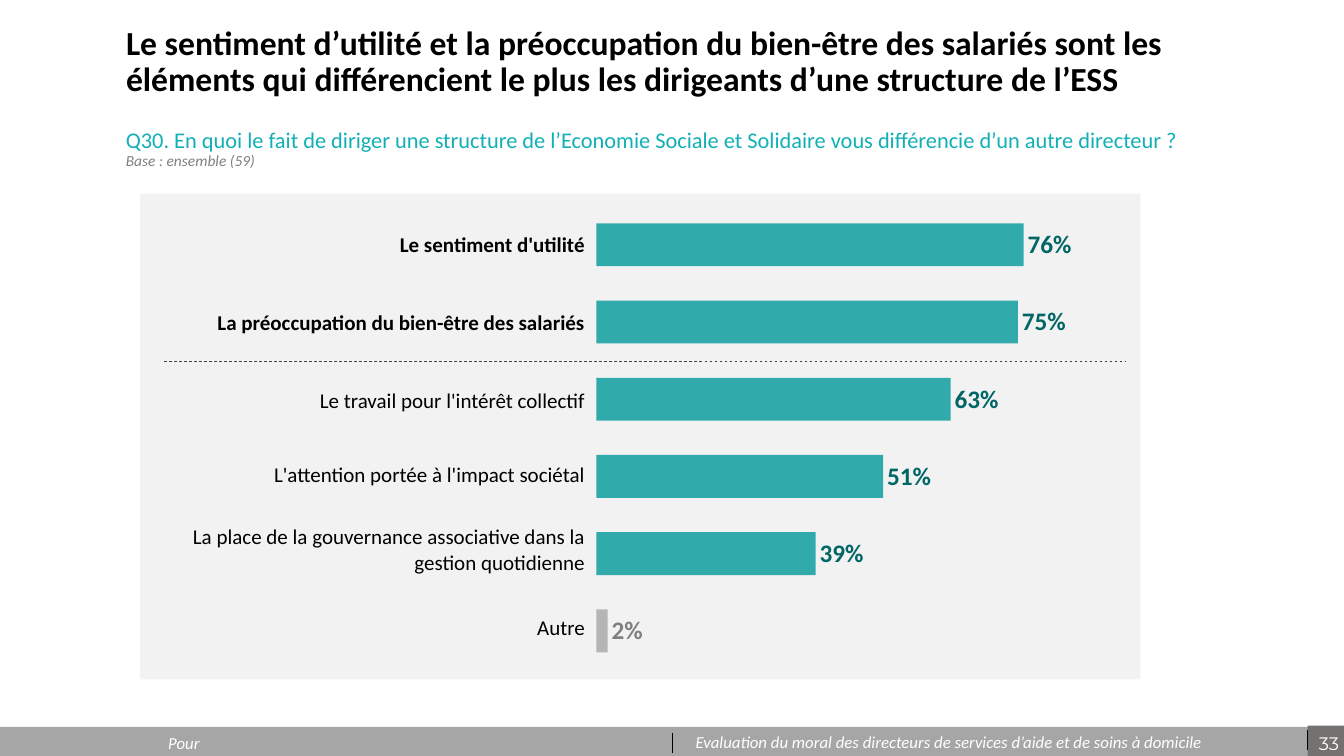
from pptx import Presentation
from pptx.chart.data import CategoryChartData
from pptx.dml.color import RGBColor
from pptx.enum.chart import XL_CHART_TYPE, XL_LABEL_POSITION
from pptx.enum.dml import MSO_LINE
from pptx.enum.shapes import MSO_CONNECTOR, MSO_SHAPE
from pptx.enum.text import MSO_ANCHOR, MSO_AUTO_SIZE, PP_ALIGN
from pptx.oxml import parse_xml
from pptx.oxml.ns import nsdecls, qn
from pptx.util import Inches, Pt
from lxml import etree


def rgb(value):
    return RGBColor.from_string(value)


def style_font(font, size, colour, bold=False, italic=False, name="Calibri"):
    font.name = name
    font.size = Pt(size)
    font.bold = bold
    font.italic = italic
    font.color.rgb = rgb(colour)


deck = Presentation()
deck.slide_width = Inches(13.33)
deck.slide_height = Inches(7.5)
page = deck.slides.add_slide(deck.slide_layouts[5])
shapes = page.shapes

# Footer bar, page number tile and chart panel
for left, top, width, height, colour in [
    (0, 7.21, 13.33, 0.29, "A6A6A6"),
    (12.97, 7.2, 0.36, 0.3, "767171"),
    (1.39, 1.92, 9.92, 4.82, "F2F2F2"),
]:
    block = shapes.add_shape(MSO_SHAPE.RECTANGLE, Inches(left), Inches(top),
                             Inches(width), Inches(height))
    block.shadow.inherit = False
    block.fill.solid()
    block.fill.fore_color.rgb = rgb(colour)
    block.line.fill.background()

# Footer texts
for text, left, top, width, wrap, align, size, italic, face in [
    ("33", 12.91, 7.22, 0.54, False, PP_ALIGN.CENTER, 12.9, False, "Montserrat"),
    ("Pour", 1.57, 7.22, 0.52, False, PP_ALIGN.LEFT, 12, True, "Calibri"),
    ("Evaluation du moral des directeurs de services d’aide et de soins à domicile",
     6.8, 7.21, 5.75, True, PP_ALIGN.LEFT, 12, True, "Calibri"),
]:
    box = shapes.add_textbox(Inches(left), Inches(top), Inches(width), Inches(0.3))
    box.text_frame.word_wrap = wrap
    para = box.text_frame.paragraphs[0]
    para.text = text
    para.alignment = align
    style_font(para.font, size, "FFFFFF", italic=italic, name=face)

# Title
title = shapes.title
title.left, title.top = Inches(1.15), Inches(0.31)
title.width, title.height = Inches(11.5), Inches(0.62)
title.text_frame.text = (
    "Le sentiment d’utilité et la préoccupation du bien-être des salariés sont les "
    "éléments qui différencient le plus les dirigeants d’une structure de l’ESS")
title.text_frame.word_wrap = True
title.text_frame.auto_size = MSO_AUTO_SIZE.NONE
title.text_frame.vertical_anchor = MSO_ANCHOR.MIDDLE
para = title.text_frame.paragraphs[0]
para.alignment = PP_ALIGN.LEFT
para.line_spacing = 0.9
style_font(para.font, 24, "000000", bold=True)

# Question and sample base
question = shapes.add_textbox(Inches(1.15), Inches(1.23), Inches(10.71), Inches(0.55))
question.text_frame.word_wrap = True
para = question.text_frame.paragraphs[0]
para.line_spacing = 0.9
span = para.add_run()
span.text = ("Q30. En quoi le fait de diriger une structure de l’Economie Sociale et "
             "Solidaire vous différencie d’un autre directeur ?")
style_font(span.font, 16, "13AFB7")
para.add_line_break()
span = para.add_run()
span.text = "Base : ensemble (59)"
style_font(span.font, 11, "808080", italic=True)

# Answer labels
answers = [
    ("Le sentiment d'utilité", 0.76, 0.77),
    ("La préoccupation du bien-être des salariés", 0.75, 0.78),
    ("Le travail pour l'intérêt collectif", 0.63, 0.77),
    ("L'attention portée à l'impact sociétal", 0.51, 0.71),
    ("La place de la gouvernance associative dans la gestion quotidienne", 0.39, 0.77),
    ("Autre", 0.02, 0.77),
]
table = shapes.add_table(len(answers), 1, Inches(1.6), Inches(2.04),
                         Inches(4.21), Inches(4.58)).table
table.first_row = False
table.horz_banding = False
no_grid_style = "{2D5ABB26-0587-4C30-8999-92F81FD0307C}"
table._tbl.tblPr.find(qn("a:tableStyleId")).text = no_grid_style
for index, (label, share, height) in enumerate(answers):
    table.rows[index].height = Inches(height)
    cell = table.cell(index, 0)
    cell.fill.background()
    cell.vertical_anchor = MSO_ANCHOR.MIDDLE
    cell.margin_left = cell.margin_right = cell.margin_top = Inches(0.01)
    cell.margin_bottom = 0
    para = cell.text_frame.paragraphs[0]
    para.text = label
    para.alignment = PP_ALIGN.RIGHT
    style_font(para.font, 15, "000000", bold=index < 2)

# Bar chart
data = CategoryChartData(number_format="0%")
data.categories = [str(number) for number in range(1, len(answers) + 1)]
data.add_series("Series 1", [share for label, share, height in answers])
chart = shapes.add_chart(XL_CHART_TYPE.BAR_CLUSTERED, Inches(5.88), Inches(1.92),
                         Inches(5.15), Inches(4.82), data).chart
chart.has_legend = False
chart.has_title = False
style_font(chart.font, 18, "000000", bold=True, name="Arial")
chart.category_axis.reverse_order = True
chart.category_axis.visible = False
values = chart.value_axis
values.minimum_scale, values.maximum_scale, values.major_unit = 0, 0.8, 1
values.has_major_gridlines = False
values.visible = False

plot = chart.plots[0]
plot.gap_width = 80
plot.vary_by_categories = False
series = plot.series[0]
other = series.points[len(answers) - 1]
for bar, colour in [(series, "009999"), (other, "A6A6A6")]:
    bar.format.fill.solid()
    bar.format.fill.fore_color.rgb = rgb(colour)
for colour in chart._chartSpace.xpath(".//c:ser//c:spPr//a:srgbClr"):
    etree.SubElement(colour, qn("a:alpha")).set("val", "80000")

labels = series.data_labels
labels.show_value = True
labels.number_format = "0%"
labels.number_format_is_linked = False
for label, colour in [(labels, "006666"), (other.data_label, "808080")]:
    label.position = XL_LABEL_POSITION.OUTSIDE_END
    style_font(label.font, 18, colour, bold=True)

plot_area = chart._chartSpace.chart.plotArea
for old_layout in plot_area.findall(qn("c:layout")):
    plot_area.remove(old_layout)
plot_area.insert(0, parse_xml(
    f'<c:layout {nsdecls("c")}><c:manualLayout><c:layoutTarget val="inner"/>'
    '<c:xMode val="edge"/><c:yMode val="edge"/><c:x val="0.007"/><c:y val="0.026"/>'
    '<c:w val="0.866"/><c:h val="0.954"/></c:manualLayout></c:layout>'))

# Footer separators and the dashed divider under the top two answers
for left, top, right, bottom, colour, dash in [
    (12.97, 7.24, 12.97, 7.44, "000000", None),
    (6.67, 7.27, 6.67, 7.47, "000000", None),
    (1.63, 3.59, 11.16, 3.59, "404040", MSO_LINE.DASH),
]:
    rule = shapes.add_connector(MSO_CONNECTOR.STRAIGHT, Inches(left), Inches(top),
                                Inches(right), Inches(bottom))
    rule.line.color.rgb = rgb(colour)
    rule.line.width = Pt(0.5)
    rule.line.dash_style = dash
    etree.SubElement(rule._element.spPr, qn("a:effectLst"))

deck.save("out.pptx")
